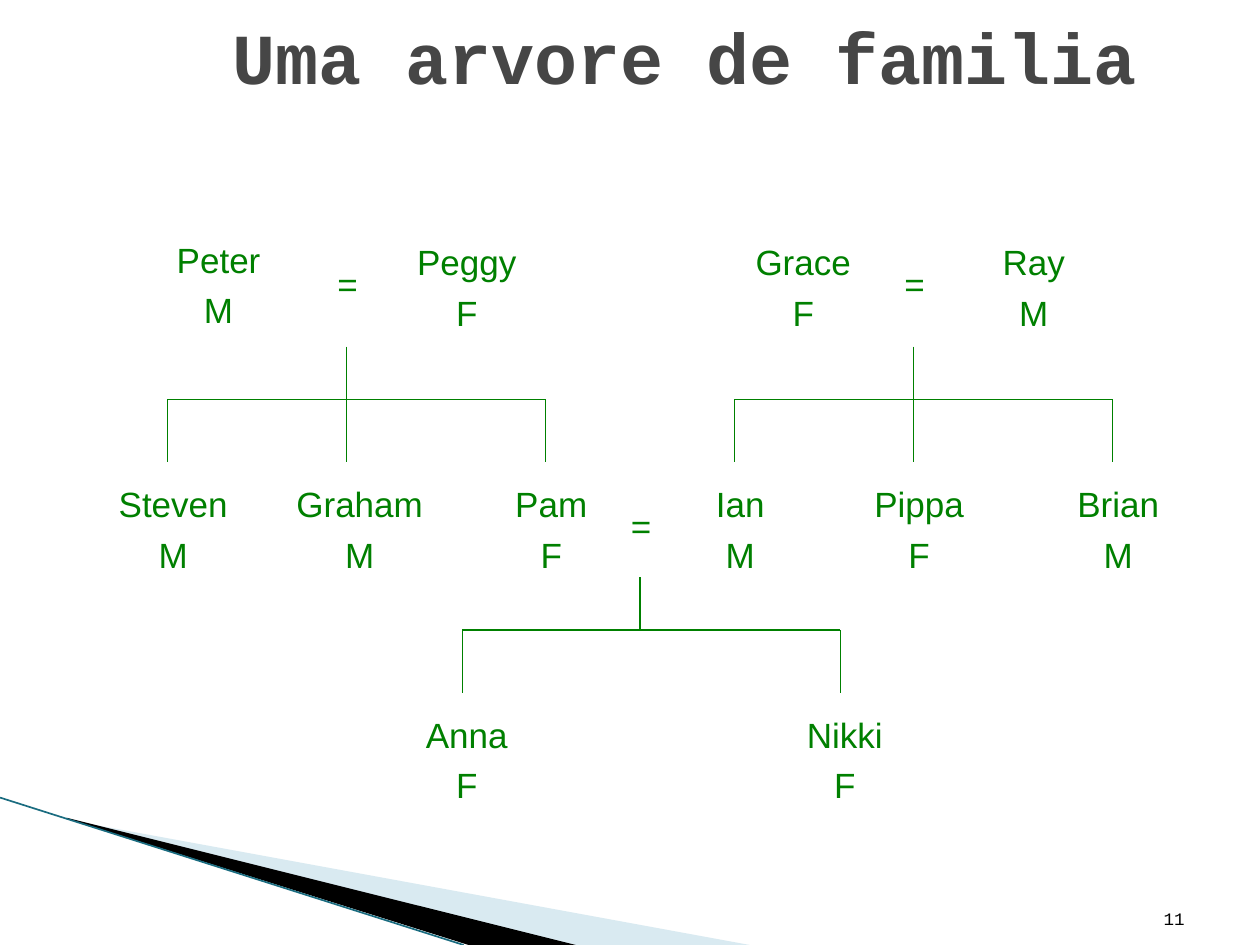
"""Build a family tree slide with three generations."""
from lxml.etree import SubElement
from pptx import Presentation
from pptx.dml.color import RGBColor
from pptx.enum.shapes import MSO_CONNECTOR
from pptx.enum.text import MSO_ANCHOR, PP_ALIGN
from pptx.oxml.ns import qn
from pptx.util import Inches, Pt

GREEN = RGBColor(0x00, 0x80, 0x00)
GREY = RGBColor(0x46, 0x46, 0x46)
BLACK = RGBColor(0x00, 0x00, 0x00)
PALE_BLUE = RGBColor(0xA0, 0xCB, 0xDC)
TEAL = RGBColor(0x1A, 0x6C, 0x80)

TITLE = {"name": "Courier New", "size": Pt(41), "bold": True}
NUMBER = {"name": "Courier New", "size": Pt(10)}
PERSON = {"name": "Arial", "size": Pt(20)}
MARRIAGE = {**PERSON, "italic": True}

prs = Presentation()
prs.slide_width, prs.slide_height = Inches(10), Inches(7.5)
slide = prs.slides.add_slide(prs.slide_layouts[6])


def add_label(lines, box, font_format, color, align, anchor=MSO_ANCHOR.TOP, top_inset=0.05):
    frame = slide.shapes.add_textbox(*map(Inches, box)).text_frame
    frame.word_wrap = False
    frame.vertical_anchor = anchor
    frame.margin_top = Inches(top_inset)
    for index, line in enumerate(lines):
        paragraph = frame.paragraphs[0] if index == 0 else frame.add_paragraph()
        paragraph.alignment = align
        if index:
            paragraph.space_before = Pt(5)
        run = paragraph.add_run()
        run.text = line
        for key, value in font_format.items():
            setattr(run.font, key, value)
        run.font.color.rgb = color


def add_line(x1, y1, x2, y2, color=GREEN, width=0.75):
    line = slide.shapes.add_connector(MSO_CONNECTOR.STRAIGHT, *map(Inches, (x1, y1, x2, y2)))
    line.line.color.rgb = color
    line.line.width = Pt(width)
    SubElement(line._element.spPr, qn("a:effectLst"))


wedges = [
    (PALE_BLUE, 40, [(0.55, 6.51), (5.95, 7.5), (4.56, 7.5), (0.55, 6.5)]),
    (BLACK, 100, [(0.53, 6.49), (4.57, 7.5), (3.72, 7.5), (0.54, 6.5)]),
]
for color, opacity, corners in wedges:
    start, *others = [(Inches(x), Inches(y)) for x, y in corners]
    outline = slide.shapes.build_freeform(*start)
    outline.add_line_segments(others, close=True)
    wedge = outline.convert_to_shape()
    wedge.shadow.inherit = False
    wedge.fill.solid()
    wedge.fill.fore_color.rgb = color
    wedge.line.fill.background()
    if opacity < 100:
        tint = wedge._element.spPr.find(qn("a:solidFill"))[0]
        SubElement(tint, qn("a:alpha"), val=str(opacity * 1000))
add_line(0, 6.33, 3.68, 7.5, TEAL, 0.95)

add_label(["11"], (8.67, 7.02, 0.83, 0.4), NUMBER, BLACK, PP_ALIGN.RIGHT, MSO_ANCHOR.BOTTOM)
add_label(["Uma arvore de familia"], (1.75, -0.09, 8.25, 1.07), TITLE, GREY,
          PP_ALIGN.LEFT, MSO_ANCHOR.MIDDLE)

people = [
    ("Peter", "M", 1.11, 1.81), ("Peggy", "F", 3.08, 1.83),
    ("Grace", "F", 5.75, 1.83), ("Ray", "M", 7.58, 1.83),
    ("Steven", "M", 0.75, 3.75), ("Graham", "M", 2.23, 3.75), ("Pam", "F", 3.75, 3.75),
    ("Ian", "M", 5.25, 3.75), ("Pippa", "F", 6.67, 3.75), ("Brian", "M", 8.25, 3.75),
    ("Anna", "F", 3.08, 5.58), ("Nikki", "F", 6.08, 5.58),
]
for name, sex, left, top in people:
    add_label([name, sex], (left, top, 1.25, 0.83), PERSON, GREEN, PP_ALIGN.CENTER, top_inset=0.08)

families = [
    (2.75, 2, 2.75, 3.67, 3.17, 1.33),
    (7.25, 2, 2.75, 3.67, 3.17, 5.83),
    (5.08, 3.92, 4.58, 5, 5, 3.67),
]
for center, sign_top, stem_top, stem_bottom, bar, first_child in families:
    last_child = first_child + 3
    add_label(["="], (center - 0.33, sign_top, 0.67, 0.42), MARRIAGE, GREEN,
              PP_ALIGN.CENTER, top_inset=0.08)
    add_line(center, stem_top, center, stem_bottom)
    add_line(first_child, bar, last_child, bar)
    for child in (first_child, last_child):
        add_line(child, bar, child, bar + 0.5)

prs.save("out.pptx")
